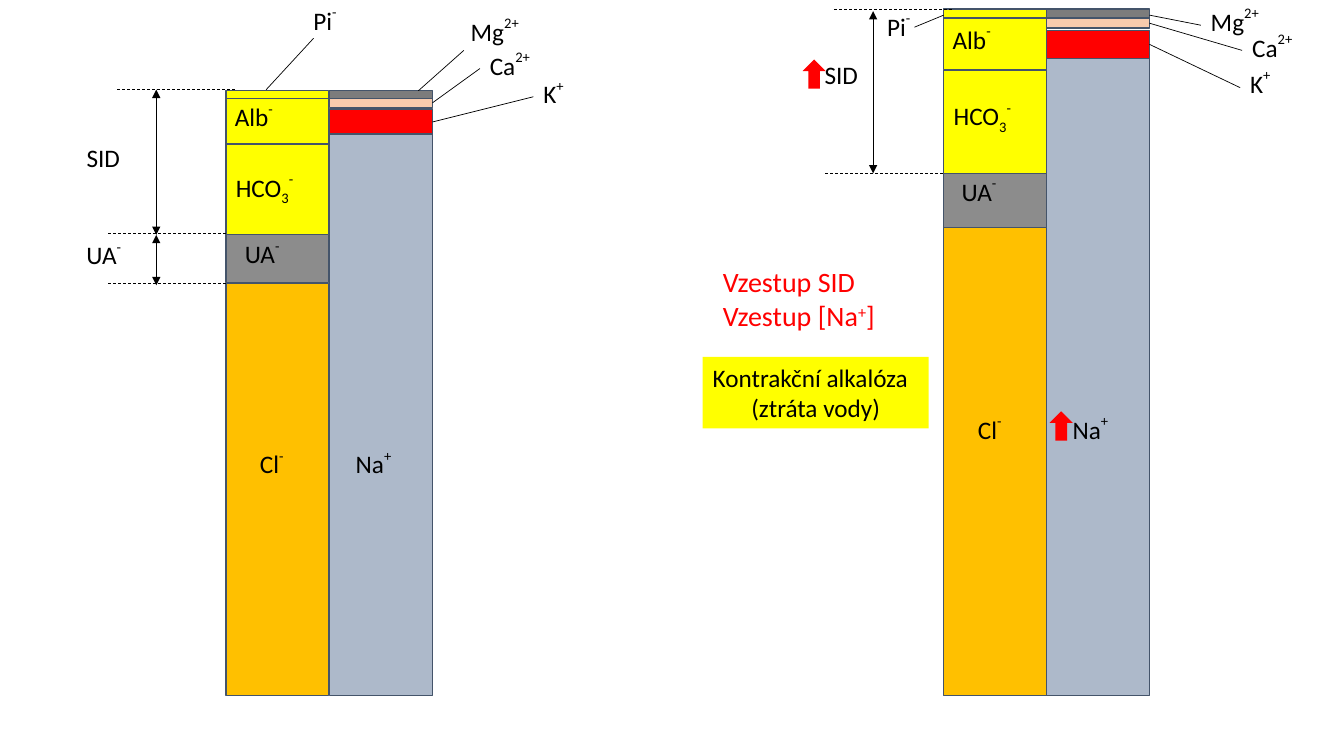
from lxml import etree
from pptx import Presentation
from pptx.dml.color import RGBColor
from pptx.enum.dml import MSO_LINE
from pptx.enum.shapes import MSO_CONNECTOR, MSO_SHAPE
from pptx.enum.text import MSO_AUTO_SIZE, PP_ALIGN
from pptx.oxml.ns import qn
from pptx.util import Inches, Pt

RECTANGLE, DOWN_ARROW = MSO_SHAPE.RECTANGLE, MSO_SHAPE.DOWN_ARROW
STRAIGHT = MSO_CONNECTOR.STRAIGHT
DASH = MSO_LINE.DASH
GROW = MSO_AUTO_SIZE.SHAPE_TO_FIT_TEXT
LEFT, CENTER = PP_ALIGN.LEFT, PP_ALIGN.CENTER

COLORS = {
    "black": "000000", "red": "FF0000", "yellow": "FFFF00", "orange": "FFC000",
    "blue": "ADB9CA", "peach": "F8CBAD", "gray": "8C8C8C", "dark_gray": "7C7C7C",
    "outline": "44546A",
}

# Each label: box width, then spans of (text, baseline percent)
LABELS = {
    "Pi": (0.56, [("Pi", 0), ("-", 50)]),
    "Mg": (0.91, [("Mg", 0), ("2+", 50)]),
    "Ca": (0.81, [("Ca", 0), ("2+", 50)]),
    "K": (0.57, [("K", 0), ("+", 50)]),
    "Na": (0.72, [("Na", 0), ("+", 50)]),
    "Cl": (0.59, [("Cl", 0), ("-", 50)]),
    "UA": (0.76, [("UA", 0), ("-", 50)]),
    "HCO3": (1.1, [("HCO", 0), ("3", -25), ("-", 50)]),
    "Alb": (0.78, [("Alb", 0), ("-", 50)]),
    "SID": (0.75, [("SID", 0)]),
}
ION_COLORS = {
    "Na": "blue", "K": "red", "Ca": "peach", "Mg": "dark_gray", "Cl": "orange",
    "Pi": "yellow", "UA": "gray", "HCO3": "yellow", "Alb": "yellow",
}
BAR_WIDTH = 1.02

# Ion bars: top and height; labels: left and top; lines: x1, y1, x2, y2
DIAGRAMS = [
    {
        "cations": (3.27, {"Na": (1.33, 5.57), "K": (1.08, 0.25),
                           "Ca": (0.96, 0.11), "Mg": (0.9, 0.08)}),
        "anions": (2.24, {"Cl": (2.81, 4.09), "Pi": (0.9, 0.1), "UA": (2.32, 0.48),
                          "HCO3": (1.43, 0.9), "Alb": (0.98, 0.45)}),
        "labels": [("Pi", 3.01, -0.02), ("Mg", 4.57, 0.09), ("Ca", 4.76, 0.43),
                   ("K", 5.29, 0.71), ("Na", 3.43, 4.38), ("Cl", 2.48, 4.38),
                   ("UA", 2.33, 2.3), ("HCO3", 2.24, 1.64), ("Alb", 2.23, 0.94),
                   ("SID", 0.76, 1.36), ("UA", 0.76, 2.31)],
        "leaders": [(4.6, 0.5, 4.15, 0.9), (4.76, 0.68, 4.29, 1.02),
                    (5.29, 0.96, 4.29, 1.21), (2.64, 0.89, 3.11, 0.38)],
        "levels": [(2.24, 2.32), (2.33, 0.89), (2.24, 2.81)],
        "ranges": [(1.55, 0.89, 2.33), (1.55, 2.33, 2.83)],
    },
    {
        "cations": (10.38, {"Na": (0.58, 6.32), "K": (0.3, 0.28),
                            "Ca": (0.16, 0.12), "Mg": (0.09, 0.09)}),
        "anions": (9.36, {"Cl": (2.25, 4.65), "Pi": (0.09, 0.11), "UA": (1.71, 0.55),
                          "HCO3": (0.7, 1.02), "Alb": (0.18, 0.51)}),
        "labels": [("Pi", 8.7, 0.04), ("Mg", 11.91, -0.01), ("Ca", 12.32, 0.25),
                   ("K", 12.3, 0.61), ("Na", 10.54, 4.04), ("Cl", 9.6, 4.04),
                   ("UA", 9.44, 1.68), ("HCO3", 9.36, 0.93), ("Alb", 9.35, 0.17),
                   ("SID", 8.08, 0.54)],
        "leaders": [(12.32, 0.5, 11.4, 0.23), (11.91, 0.25, 11.4, 0.15),
                    (12.3, 0.87, 11.4, 0.44), (9.07, 0.27, 9.36, 0.15)],
        "levels": [(9.35, 1.72), (9.44, 0.09)],
        "ranges": [(8.66, 0.11, 1.72)],
    },
]
LEVEL_LENGTH = 1.18


def rgb(name):
    return RGBColor.from_string(COLORS[name])


def add_span(para, text, size=18, color="black", font="Calibri", baseline=0):
    span = para.add_run()
    span.text = text
    span.font.name = font
    span.font.size = Pt(size)
    span.font.color.rgb = rgb(color)
    if baseline:
        span.font._element.set("baseline", str(baseline * 1000))


class Painter:
    """Holds the line style and the current slide."""

    def __init__(self, page, line_width=0.5, outline="outline"):
        self.page = page
        self.line_width = line_width
        self.outline = outline

    def shape(self, kind, left, top, width, height, fill, outlined=True):
        box = self.page.shapes.add_shape(
            kind, Inches(left), Inches(top), Inches(width), Inches(height))
        box.shadow.inherit = False
        box.fill.solid()
        box.fill.fore_color.rgb = rgb(fill)
        if outlined:
            box.line.color.rgb = rgb(self.outline)
            box.line.width = Pt(1)
        else:
            box.line.fill.background()
        return box

    def fill_text(self, frame, lines, align=(LEFT, LEFT), wrap=False, **style):
        frame.word_wrap = wrap
        frame.auto_size = GROW
        for index, spans in enumerate(lines):
            para = frame.add_paragraph() if index else frame.paragraphs[0]
            para.alignment = align[index]
            for text, baseline in spans:
                add_span(para, text, baseline=baseline, **style)

    def text(self, left, top, width, height, lines, **style):
        box = self.page.shapes.add_textbox(
            Inches(left), Inches(top), Inches(width), Inches(height))
        self.fill_text(box.text_frame, lines, **style)

    def label(self, ion, left, top):
        width, spans = LABELS[ion]
        self.text(left, top, width, 0.5, [spans])

    def line(self, x1, y1, x2, y2, dashed=False, arrows=False):
        connector = self.page.shapes.add_connector(
            STRAIGHT, Inches(x1), Inches(y1), Inches(x2), Inches(y2))
        connector.line.color.rgb = rgb("black")
        connector.line.width = Pt(self.line_width)
        if dashed:
            connector.line.dash_style = DASH
        properties = connector._element.spPr
        if arrows:
            for end in ("a:headEnd", "a:tailEnd"):
                etree.SubElement(properties.find(qn("a:ln")), qn(end), type="triangle")
        etree.SubElement(properties, qn("a:effectLst"))

    def diagram(self, data):
        # Stacked ion columns
        for column in ("cations", "anions"):
            left, bars = data[column]
            for ion, (top, height) in bars.items():
                self.shape(RECTANGLE, left, top, BAR_WIDTH, height, ION_COLORS[ion])
        for label in data["labels"]:
            self.label(*label)
        # Leaders, dashed levels and measured ranges
        for leader in data["leaders"]:
            self.line(*leader)
        for right, y in data["levels"]:
            self.line(right, y, right - LEVEL_LENGTH, y, dashed=True)
        for x, top, bottom in data["ranges"]:
            self.line(x, top, x, bottom, arrows=True)


def main():
    deck = Presentation()
    deck.slide_width, deck.slide_height = Inches(13.33), Inches(7.5)
    painter = Painter(deck.slides.add_slide(deck.slide_layouts[6]))

    for data in DIAGRAMS:
        painter.diagram(data)

    # Red arrows marking the rise
    for left, top in [(7.96, 0.59), (10.41, 4.08)]:
        arrow = painter.shape(DOWN_ARROW, left, top, 0.23, 0.29, "red", outlined=False)
        arrow.rotation = 180

    # Findings and diagnosis
    painter.text(7.07, 2.58, 1.81, 0.77,
                 [[("Vzestup SID", 0)], [("Vzestup [Na", 0), ("+", 30), ("]", 0)]],
                 size=20, color="red")
    diagnosis = painter.shape(RECTANGLE, 6.97, 3.54, 2.24, 0.71, "yellow", outlined=False)
    painter.fill_text(diagnosis.text_frame,
                      [[("Kontrakční alkalóza", 0)], [("(ztráta vody)", 0)]],
                      align=(LEFT, CENTER), wrap=True)

    deck.save("out.pptx")


if __name__ == "__main__":
    main()
